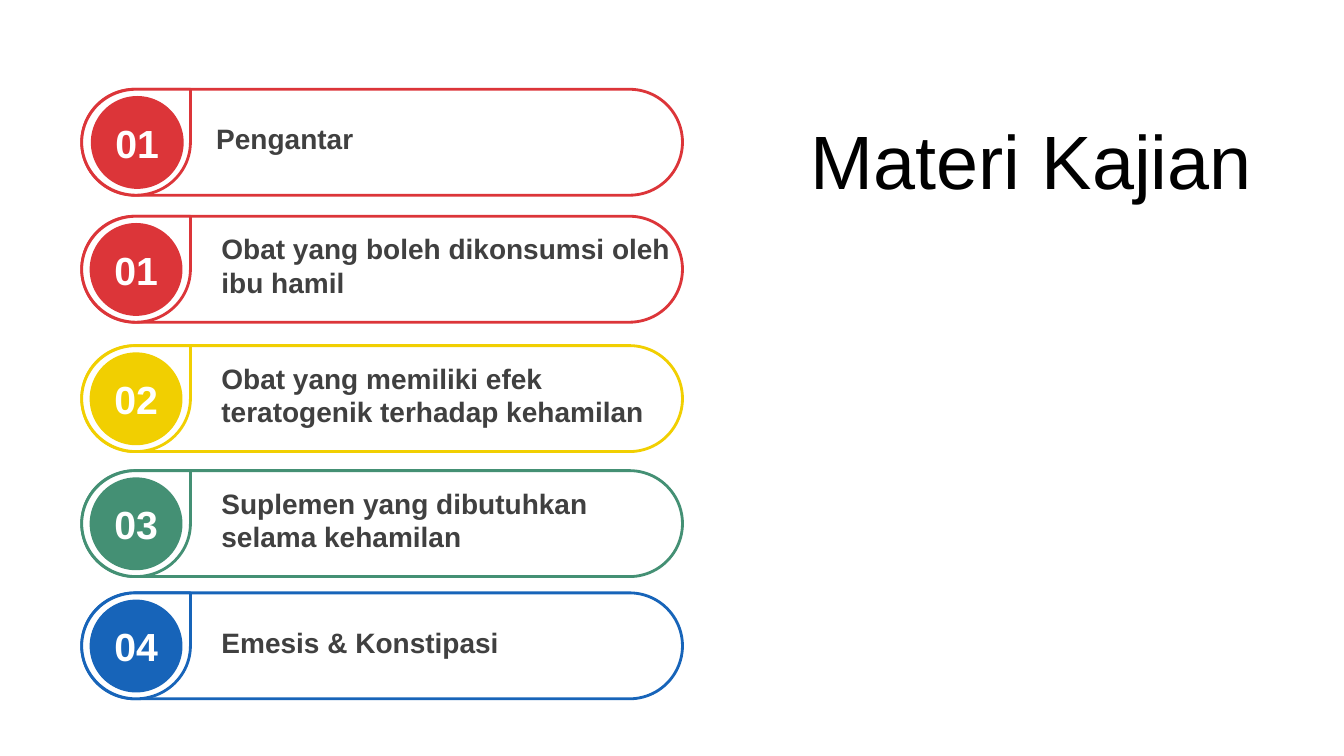
from pptx import Presentation, util as u
from pptx.dml.color import RGBColor
from pptx.enum import shapes, text

Cm, Pt = u.Cm, u.Pt

# Content: number, topic, colour name, top (cm), nudge right of badge and topic (cm)
TITLE = "Materi Kajian"
TOPICS = [
    ("01", "Pengantar", "red", 2.25, 0.03, -0.13),
    ("01", "Obat yang boleh dikonsumsi oleh ibu hamil", "red", 5.45, 0, 0),
    ("02", "Obat yang memiliki efek teratogenik terhadap kehamilan", "yellow", 8.71, 0, 0),
    ("03", "Suplemen yang dibutuhkan selama kehamilan", "green", 11.86, 0, 0),
    ("04", "Emesis & Konstipasi", "blue", 14.94, 0, 0),
]


class Theme:
    font = "Arial"
    title_size, number_size, topic_size = 54, 28, 20
    line_width = 2
    colors = {
        "red": "DC3539", "yellow": "F1CF01", "green": "449074", "blue": "1764B9",
        "white": "FFFFFF", "black": "000000", "grey": "404040",
    }

    @classmethod
    def rgb(cls, name):
        return RGBColor.from_string(cls.colors[name])


# Layout in cm
LEFT, ROW_H = 2.06, 2.67
PILL_W, DROP_W = 15.14, 2.74
BADGE_D, BADGE_DX, BADGE_DY = 2.34, 0.2, 0.17
TOPIC_LEFT, TOPIC_W = 5.33, 11.89
TOPIC_DY = -0.1


def write(sp, content, size, color, bold=False, align=text.PP_ALIGN.LEFT, margin=0.25):
    tf = sp.text_frame
    tf.word_wrap = True
    tf.auto_size = text.MSO_AUTO_SIZE.NONE
    tf.vertical_anchor = text.MSO_ANCHOR.MIDDLE
    tf.margin_left = tf.margin_right = Cm(margin)
    tf.margin_top = tf.margin_bottom = Cm(0)
    p = tf.paragraphs[0]
    p.alignment = align
    p.line_spacing = 1.0
    r = p.add_run()
    r.text = content
    r.font.name, r.font.size, r.font.bold = Theme.font, Pt(size), bold
    r.font.color.rgb = Theme.rgb(color)


def add_shape(s, kind, x, y, w, h, fill, line=None):
    sp = s.shapes.add_shape(kind, Cm(x), Cm(y), Cm(w), Cm(h))
    sp.shadow.inherit = False
    sp.fill.solid()
    sp.fill.fore_color.rgb = Theme.rgb(fill)
    if line:
        sp.line.color.rgb = Theme.rgb(line)
        sp.line.width = Pt(Theme.line_width)
    else:
        sp.line.fill.background()
    return sp


def add_topic(s, number, topic, color, top, badge_nudge, topic_nudge):
    kind = shapes.MSO_SHAPE
    # Pill and teardrop outlines
    pill = add_shape(s, kind.ROUNDED_RECTANGLE, LEFT, top, PILL_W, ROW_H, "white", color)
    pill.adjustments[0] = 0.5
    add_shape(s, kind.TEAR, LEFT, top, DROP_W, ROW_H, "white", color)
    # Numbered badge
    badge = add_shape(s, kind.OVAL, LEFT + BADGE_DX + badge_nudge, top + BADGE_DY,
                      BADGE_D, BADGE_D, color)
    write(badge, number, Theme.number_size, "white", bold=True,
          align=text.PP_ALIGN.CENTER, margin=0)
    # Topic
    box = s.shapes.add_textbox(Cm(TOPIC_LEFT + topic_nudge), Cm(top + TOPIC_DY),
                               Cm(TOPIC_W), Cm(ROW_H))
    write(box, topic, Theme.topic_size, "grey", bold=True)


def main():
    prs = Presentation()
    prs.slide_width, prs.slide_height = Cm(33.87), Cm(19.05)
    s = prs.slides.add_slide(prs.slide_layouts[5])

    # Title
    title = s.shapes.title
    title.left, title.top, title.width, title.height = Cm(19.71), Cm(2.72), Cm(12.09), Cm(2.57)
    write(title, TITLE, Theme.title_size, "black", align=text.PP_ALIGN.RIGHT)

    # Topic rows
    for row in TOPICS:
        add_topic(s, *row)

    prs.save("out.pptx")


if __name__ == "__main__":
    main()
